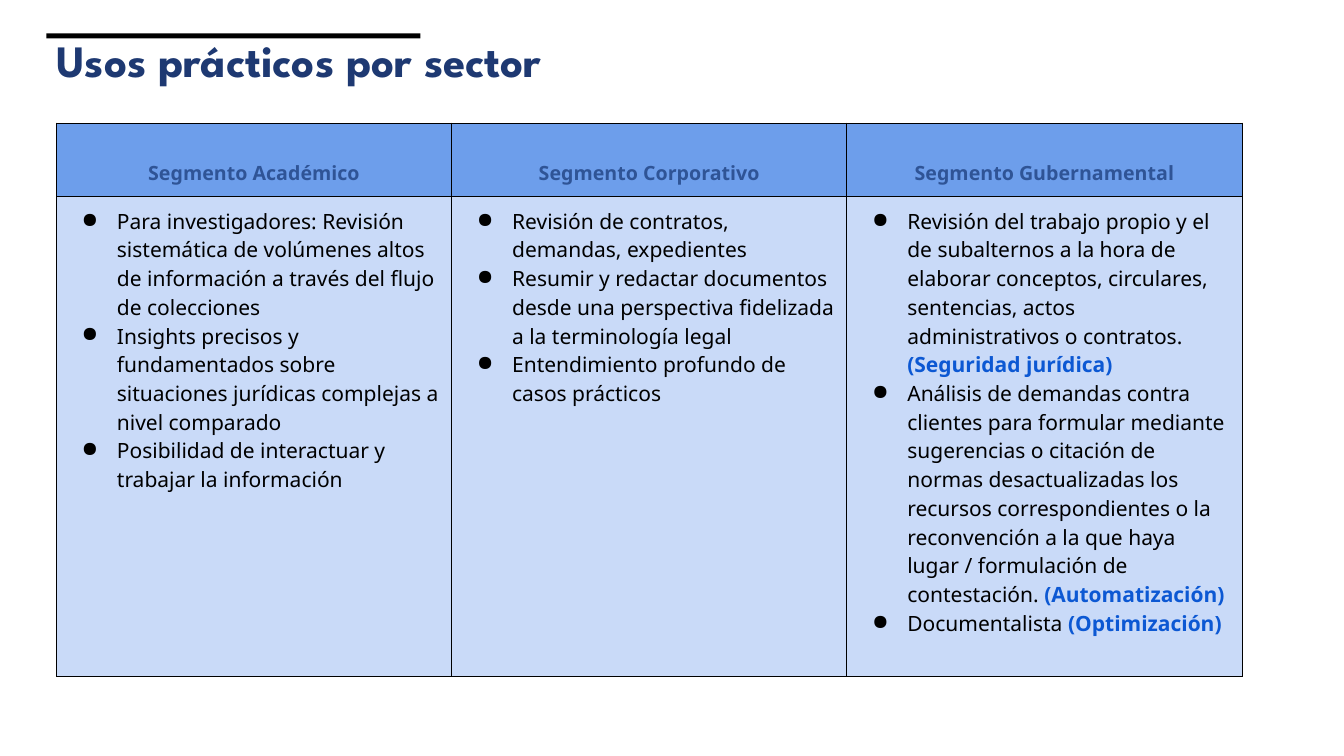
from lxml import etree
from pptx import Presentation
from pptx.dml.color import RGBColor
from pptx.enum.shapes import MSO_SHAPE
from pptx.enum.text import MSO_ANCHOR, PP_ALIGN
from pptx.oxml.ns import qn
from pptx.util import Pt

RECT = MSO_SHAPE.RECTANGLE
TOP, BOTTOM = MSO_ANCHOR.TOP, MSO_ANCHOR.BOTTOM
LEFT, CENTER = PP_ALIGN.LEFT, PP_ALIGN.CENTER
EMU_PER_PX = 9144
TITLE_ONLY = 5

BLACK = "000000"
TITLE_FONT = {"name": "League Spartan", "size": Pt(32), "bold": True}
HEAD_FONT = {"name": "Noto Sans", "size": Pt(14), "bold": True}
BODY_FONT = {"name": "Noto Sans", "size": Pt(15), "bold": False}
STRONG_FONT = {**BODY_FONT, "bold": True}

SEGMENTS = {
    "Segmento Académico": [
        ("Para investigadores: Revisión sistemática de volúmenes altos de "
         "información a través del flujo de colecciones", ""),
        ("Insights precisos y fundamentados sobre situaciones jurídicas "
         "complejas a nivel comparado", ""),
        ("Posibilidad de interactuar y trabajar la información", ""),
    ],
    "Segmento Corporativo": [
        ("Revisión de contratos, demandas, expedientes", ""),
        ("Resumir y redactar documentos desde una perspectiva fidelizada a la "
         "terminología legal", ""),
        ("Entendimiento profundo de casos prácticos", ""),
    ],
    "Segmento Gubernamental": [
        ("Revisión del trabajo propio y el de subalternos a la hora de elaborar "
         "conceptos, circulares, sentencias, actos administrativos o contratos. ",
         "(Seguridad jurídica)"),
        ("Análisis de demandas contra clientes para formular mediante "
         "sugerencias o citación de normas desactualizadas los recursos "
         "correspondientes o la reconvención a la que haya lugar / formulación "
         "de contestación. ", "(Automatización)"),
        ("Documentalista ", "(Optimización)"),
    ],
}


def px(n):
    """Turn whole px into EMU."""
    return n * EMU_PER_PX


def rgb(color):
    """Turn a hex string into a colour."""
    return RGBColor.from_string(color)


def apply(target, values):
    """Set every attribute listed in a dict."""
    for name, value in values.items():
        setattr(target, name, value)


class Deck:
    """Hold the presentation, its style and the current slide."""

    def __init__(self, width, height):
        """Start a presentation with one title-only slide."""
        self.prs = Presentation()
        apply(self.prs, {"slide_width": px(width), "slide_height": px(height)})
        self.s = self.prs.slides.add_slide(self.prs.slide_layouts[TITLE_ONLY])

    def run(self, p, text, font, color):
        """Add a formatted run to a paragraph."""
        r = p.add_run()
        r.text = text
        apply(r.font, font)
        r.font.color.rgb = rgb(color)

    def bar(self, x, y, w, h, color):
        """Draw a plain filled bar."""
        sp = self.s.shapes.add_shape(RECT, px(x), px(y), px(w), px(h))
        sp.shadow.inherit = False
        sp.fill.solid()
        sp.fill.fore_color.rgb = rgb(color)
        sp.line.fill.background()

    def title(self, x, y, w, h, text, color):
        """Place and format the title placeholder."""
        sp = self.s.shapes.title
        apply(sp, {"left": px(x), "top": px(y), "width": px(w), "height": px(h)})
        tf = sp.text_frame
        apply(tf, {"vertical_anchor": TOP, "word_wrap": True,
                   "margin_left": px(10), "margin_right": px(10),
                   "margin_top": px(5), "margin_bottom": px(5)})
        p = tf.paragraphs[0]
        apply(p, {"alignment": LEFT, "line_spacing": 0.9})
        self.run(p, text, TITLE_FONT, color)

    def table(self, x, y, col_width, row_heights, columns):
        """Add a table without banding and return it."""
        frame = self.s.shapes.add_table(
            len(row_heights), columns, px(x), px(y),
            px(col_width * columns), px(sum(row_heights)))
        table = frame.table
        apply(table, {"first_row": False, "horz_banding": False})
        for column in table.columns:
            column.width = px(col_width)
        for row, height in zip(table.rows, row_heights):
            row.height = px(height)
        return table

    def cell(self, cell, fill, anchor):
        """Give a cell its margins, borders and fill."""
        apply(cell, {"margin_left": px(10), "margin_right": px(10),
                     "margin_top": px(10), "margin_bottom": px(10),
                     "vertical_anchor": anchor})
        tc_pr = cell._tc.get_or_add_tcPr()
        for side in ("lnL", "lnR", "lnT", "lnB"):
            ln = etree.SubElement(tc_pr, qn(f"a:{side}"), w=str(Pt(0.75)))
            solid = etree.SubElement(ln, qn("a:solidFill"))
            etree.SubElement(solid, qn("a:srgbClr"), val=BLACK)
        cell.fill.solid()
        cell.fill.fore_color.rgb = rgb(fill)

    def heading(self, cell, text, color):
        """Write a centred column heading."""
        p = cell.text_frame.paragraphs[0]
        p.alignment = CENTER
        self.run(p, text, HEAD_FONT, color)

    def bullets(self, cell, items, strong_color):
        """Write bulleted items, each with an optional highlighted ending."""
        tf = cell.text_frame
        for i, (text, strong) in enumerate(items):
            p = tf.add_paragraph() if i else tf.paragraphs[0]
            p_pr = p._p.get_or_add_pPr()
            p_pr.set("marL", str(px(50)))
            p_pr.set("indent", str(px(-35)))
            bu_clr = etree.SubElement(p_pr, qn("a:buClr"))
            etree.SubElement(bu_clr, qn("a:srgbClr"), val=BLACK)
            etree.SubElement(p_pr, qn("a:buChar"), char="●")
            self.run(p, text, BODY_FONT, BLACK)
            if strong:
                self.run(p, strong, STRONG_FONT, strong_color)


def main():
    """Build the slide and save it."""
    deck = Deck(1333, 750)
    deck.bar(46, 33, 371, 5, BLACK)
    deck.title(46, 33, 1221, 113, "Usos prácticos por sector", "1E3972")
    table = deck.table(56, 122, 392, (73, 476), len(SEGMENTS))
    for col, (name, items) in enumerate(SEGMENTS.items()):
        head, body = table.cell(0, col), table.cell(1, col)
        deck.cell(head, "6D9EEB", BOTTOM)
        deck.heading(head, name, "2F5496")
        deck.cell(body, "C9DAF8", TOP)
        deck.bullets(body, items, "0C58D3")
    deck.prs.save("out.pptx")


if __name__ == "__main__":
    main()
